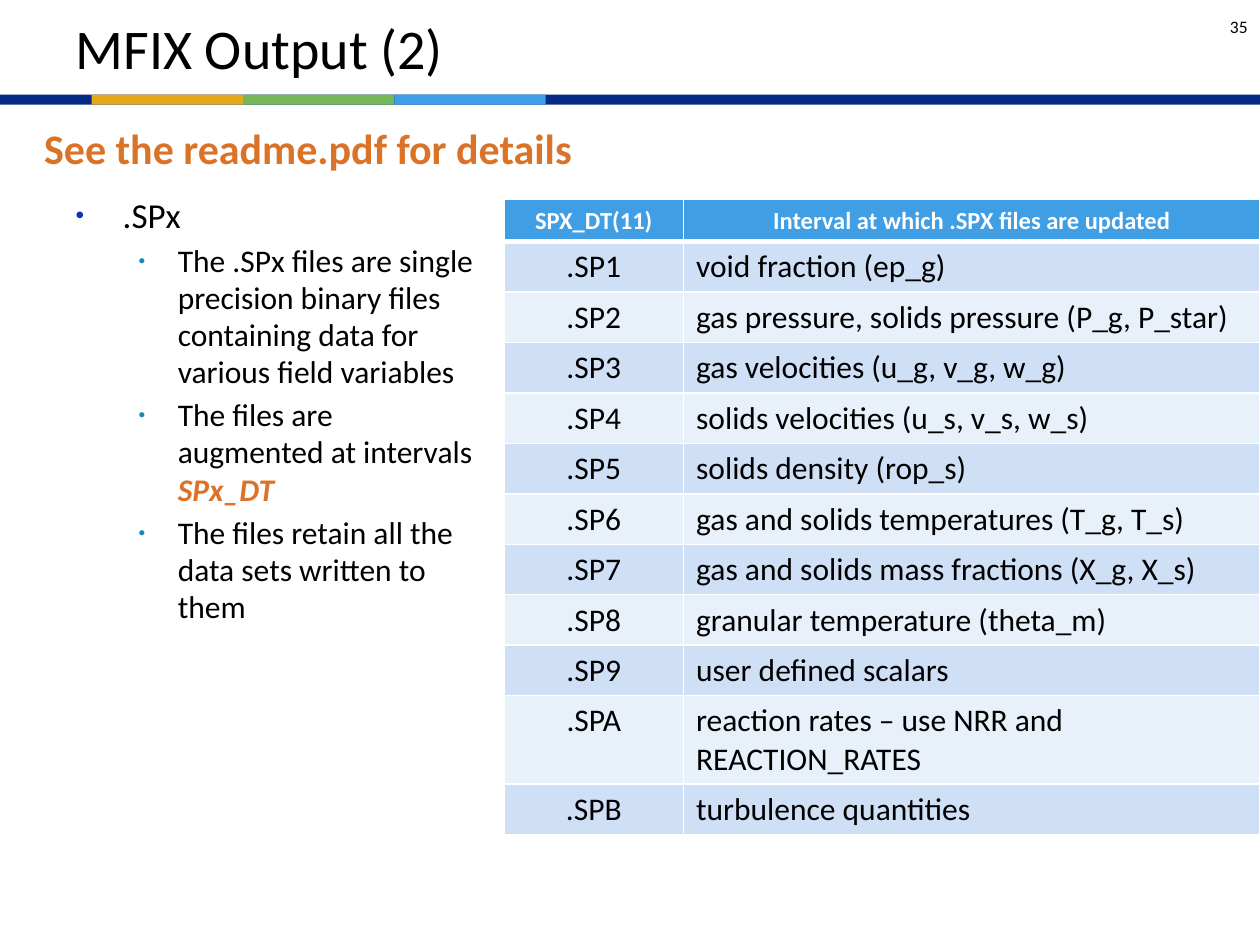
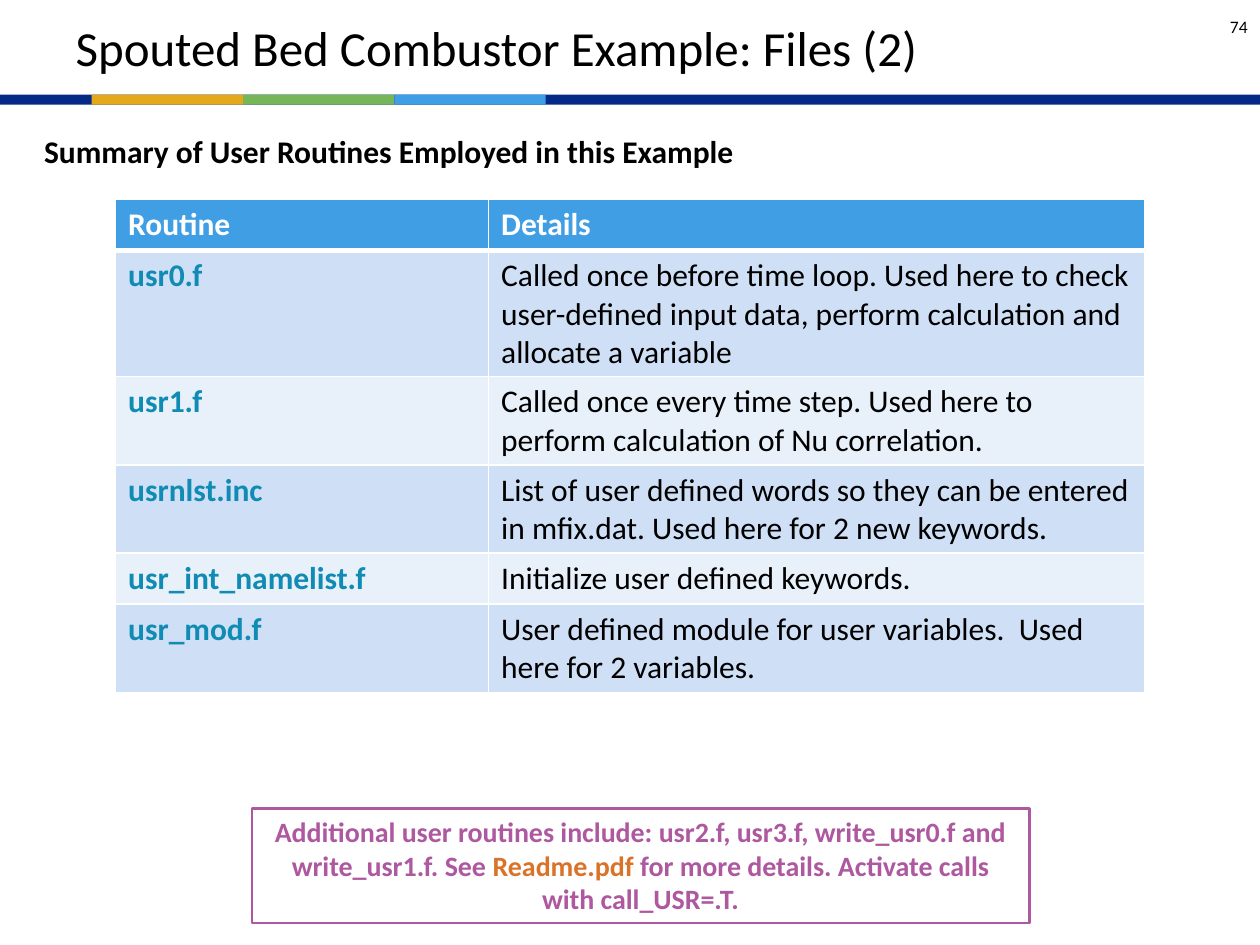
from dataclasses import dataclass

from lxml.etree import SubElement
from pptx import Presentation
from pptx.dml.color import RGBColor
from pptx.enum.shapes import MSO_SHAPE
from pptx.enum.text import MSO_ANCHOR, MSO_AUTO_SIZE, PP_ALIGN
from pptx.oxml.ns import qn
from pptx.util import Cm, Pt

# Shared look
FONT = "Calibri"
BLACK, WHITE = "000000", "FFFFFF"
NAVY, GOLD, GREEN, SKY = "042986", "E4A81B", "77B559", "3F9EE4"
ORANGE, TEAL, PURPLE, BLUE = "DA7328", "108BB4", "AE589F", "0536B3"
ROW_FILLS = ("CFDFF5", "E8F0FA")
TITLE_AND_CONTENT, TITLE_ONLY = 1, 5


@dataclass(frozen=True)
class Box:
    left: float
    top: float
    width: float
    height: float

    def lengths(self) -> tuple:
        return Cm(self.left), Cm(self.top), Cm(self.width), Cm(self.height)


@dataclass(frozen=True)
class Column:
    width: float
    align: PP_ALIGN = PP_ALIGN.LEFT
    color: str = BLACK
    bold: bool = False


@dataclass(frozen=True)
class BulletLevel:
    margin: float
    hanging: float
    color: str
    bullet_percent: int
    size: int


BULLET_LEVELS = (
    BulletLevel(0.95, 0.95, BLUE, 70, 20),
    BulletLevel(2.06, 0.79, TEAL, 60, 18),
)


def rgb(color: str) -> RGBColor:
    return RGBColor.from_string(color)


def style_font(font, size: int, color: str = BLACK, bold: bool = False) -> None:
    font.name = FONT
    font.size = Pt(size)
    font.bold = bold
    font.color.rgb = rgb(color)


def place(shape, box: Box) -> None:
    shape.left, shape.top, shape.width, shape.height = box.lengths()


def add_label(slide, box: Box, text: str, size: int, color: str = BLACK,
              bold: bool = False, align: PP_ALIGN = PP_ALIGN.LEFT):
    frame = slide.shapes.add_textbox(*box.lengths()).text_frame
    frame.word_wrap = False
    paragraph = frame.paragraphs[0]
    paragraph.text = text
    paragraph.alignment = align
    style_font(paragraph.font, size, color, bold)
    return frame


def add_band(slide) -> None:
    start, step = 1.85, 3.05
    segments = [(0, 25.4, NAVY)]
    segments += [(start + i * step, step, color)
                 for i, color in enumerate((GOLD, GREEN, SKY))]
    for left, width, color in segments:
        shape = slide.shapes.add_shape(
            MSO_SHAPE.RECTANGLE, *Box(left, 1.91, width, 0.2).lengths())
        shape.shadow.inherit = False
        shape.fill.solid()
        shape.fill.fore_color.rgb = rgb(color)
        shape.line.fill.background()


def add_base_slide(presentation, layout: int, title: str, title_size: int,
                   number: str):
    slide = presentation.slides.add_slide(presentation.slide_layouts[layout])
    add_band(slide)
    place(slide.shapes.title, Box(1.27, 0, 22.86, 1.91))
    frame = slide.shapes.title.text_frame
    frame.auto_size = MSO_AUTO_SIZE.NONE
    frame.vertical_anchor = MSO_ANCHOR.MIDDLE
    frame.margin_top = frame.margin_bottom = Cm(0.25)
    paragraph = frame.paragraphs[0]
    paragraph.text = title
    paragraph.alignment = PP_ALIGN.LEFT
    style_font(paragraph.font, title_size)
    number_frame = add_label(slide, Box(23.93, 0, 1.47, 1.07), number, 10,
                             align=PP_ALIGN.RIGHT)
    number_frame.word_wrap = True
    number_frame.vertical_anchor = MSO_ANCHOR.MIDDLE
    return slide


def set_bullet(paragraph, level: BulletLevel) -> None:
    properties = paragraph._p.get_or_add_pPr()
    properties.set("marL", str(Cm(level.margin)))
    properties.set("indent", str(-Cm(level.hanging)))
    color = SubElement(properties, qn("a:buClr"))
    SubElement(color, qn("a:srgbClr"), val=level.color)
    SubElement(properties, qn("a:buSzPct"), val=str(level.bullet_percent * 1000))
    SubElement(properties, qn("a:buFont"), typeface="Arial")
    SubElement(properties, qn("a:buChar"), char="•")


def fill_bullets(shape, items: list[tuple[int, str, str]]) -> None:
    """Each item is a level, its text and an emphasised ending."""
    frame = shape.text_frame
    frame.auto_size = MSO_AUTO_SIZE.NONE
    for i, (depth, text, emphasis) in enumerate(items):
        paragraph = frame.paragraphs[0] if i == 0 else frame.add_paragraph()
        level = BULLET_LEVELS[depth]
        paragraph.level = depth
        set_bullet(paragraph, level)
        paragraph.line_spacing = 0.98
        paragraph.space_before = Pt(0 if i == 0 else level.size * 0.2)
        style_font(paragraph.font, level.size)
        paragraph.add_run().text = text
        if emphasis:
            run = paragraph.add_run()
            run.text = emphasis
            style_font(run.font, level.size, ORANGE, True)
            run.font.italic = True


def set_borders(cell, top: int, bottom: int) -> None:
    properties = cell._tc.get_or_add_tcPr()
    for side, points in (("L", 1), ("R", 1), ("T", top), ("B", bottom)):
        line = SubElement(properties, qn(f"a:ln{side}"), w=str(Pt(points)))
        fill = SubElement(line, qn("a:solidFill"))
        SubElement(fill, qn("a:srgbClr"), val=WHITE)


def add_striped_table(slide, left: float, top: float, row_height: float,
                      columns: list[Column], rows: list[tuple[str, str]],
                      header_size: int) -> None:
    width = sum(column.width for column in columns)
    box = Box(left, top, width, row_height * len(rows))
    table = slide.shapes.add_table(
        len(rows), len(columns), *box.lengths()).table
    table.horz_banding = False
    for table_column, column in zip(table.columns, columns):
        table_column.width = Cm(column.width)
    for r, row in enumerate(rows):
        table.rows[r].height = Cm(row_height)
        header = r == 0
        for c, (text, column) in enumerate(zip(row, columns)):
            cell = table.cell(r, c)
            set_borders(cell, 3 if r == 1 else 1, 3 if header else 1)
            cell.fill.solid()
            cell.fill.fore_color.rgb = rgb(SKY if header else ROW_FILLS[(r - 1) % 2])
            paragraph = cell.text_frame.paragraphs[0]
            paragraph.text = text
            if header:
                paragraph.alignment = columns[0].align
                style_font(paragraph.font, header_size, WHITE, True)
            else:
                paragraph.alignment = column.align
                style_font(paragraph.font, 18, column.color, column.bold)


def add_note(slide, box: Box, parts: list[tuple[str, str]]) -> None:
    shape = slide.shapes.add_shape(MSO_SHAPE.RECTANGLE, *box.lengths())
    shape.shadow.inherit = False
    shape.fill.background()
    shape.line.color.rgb = rgb(PURPLE)
    shape.line.width = Pt(1.5)
    frame = shape.text_frame
    frame.word_wrap = True
    frame.auto_size = MSO_AUTO_SIZE.SHAPE_TO_FIT_TEXT
    frame.vertical_anchor = MSO_ANCHOR.TOP
    paragraph = frame.paragraphs[0]
    paragraph.alignment = PP_ALIGN.CENTER
    for text, color in parts:
        run = paragraph.add_run()
        run.text = text
        style_font(run.font, 16, color, True)


def build_output_slide(presentation) -> None:
    slide = add_base_slide(presentation, TITLE_AND_CONTENT,
                           "MFIX Output (2)", 32, "35")
    add_label(slide, Box(0.64, 2.34, 12.57, 1.27),
              "See the readme.pdf for details", 24, ORANGE, True)
    body = slide.placeholders[1]
    place(body, Box(1.27, 3.81, 8.69, 12.85))
    fill_bullets(body, [
        (0, ".SPx", ""),
        (1, "The .SPx files are single precision binary files containing "
            "data for various field variables", ""),
        (1, "The files are augmented at intervals ", "SPx_DT"),
        (1, "The files retain all the data sets written to them", ""),
    ])
    contents = (
        "void fraction (ep_g)",
        "gas pressure, solids pressure (P_g, P_star)",
        "gas velocities (u_g, v_g, w_g)",
        "solids velocities (u_s, v_s, w_s)",
        "solids density (rop_s)",
        "gas and solids temperatures (T_g, T_s)",
        "gas and solids mass fractions (X_g, X_s)",
        "granular temperature (theta_m)",
        "user defined scalars",
        "reaction rates – use NRR and REACTION_RATES",
        "turbulence quantities",
    )
    rows = [("SPX_DT(11)", "Interval at which .SPX files are updated")]
    rows += [(f".SP{suffix}", text) for suffix, text in zip("123456789AB", contents)]
    columns = [Column(3.62, PP_ALIGN.CENTER), Column(11.62)]
    add_striped_table(slide, 10.16, 4.02, 0.85, columns, rows, 14)


def build_routines_slide(presentation) -> None:
    slide = add_base_slide(presentation, TITLE_ONLY,
                           "Spouted Bed Combustor Example: Files (2)", 28, "74")
    add_label(slide, Box(0.64, 2.54, 17.04, 1.02),
              "Summary of User Routines Employed in this Example", 18, bold=True)
    rows = [
        ("Routine", "Details"),
        ("usr0.f", "Called once before time loop. Used here to check user-defined "
                   "input data, perform calculation and allocate a variable"),
        ("usr1.f", "Called once every time step. Used here to perform "
                   "calculation of Nu correlation."),
        ("usrnlst.inc", "List of user defined words so they can be entered in "
                        "mfix.dat. Used here for 2 new keywords."),
        ("usr_int_namelist.f", "Initialize user defined keywords."),
        ("usr_mod.f", "User defined module for user variables.  Used here for "
                      "2 variables."),
    ]
    columns = [Column(7.52, color=TEAL, bold=True), Column(13.23)]
    add_striped_table(slide, 2.33, 4.02, 1.03, columns, rows, 18)
    add_note(slide, Box(5.08, 16.3, 15.67, 2.31), [
        ("Additional user routines include: usr2.f, usr3.f, write_usr0.f and "
         "write_usr1.f. See ", PURPLE),
        ("Readme.pdf", ORANGE),
        (" for more details. Activate calls with call_USR=.T.", PURPLE),
    ])


def main() -> None:
    presentation = Presentation()
    presentation.slide_width, presentation.slide_height = Cm(25.4), Cm(19.05)
    build_output_slide(presentation)
    build_routines_slide(presentation)
    presentation.save("out.pptx")


if __name__ == "__main__":
    main()
